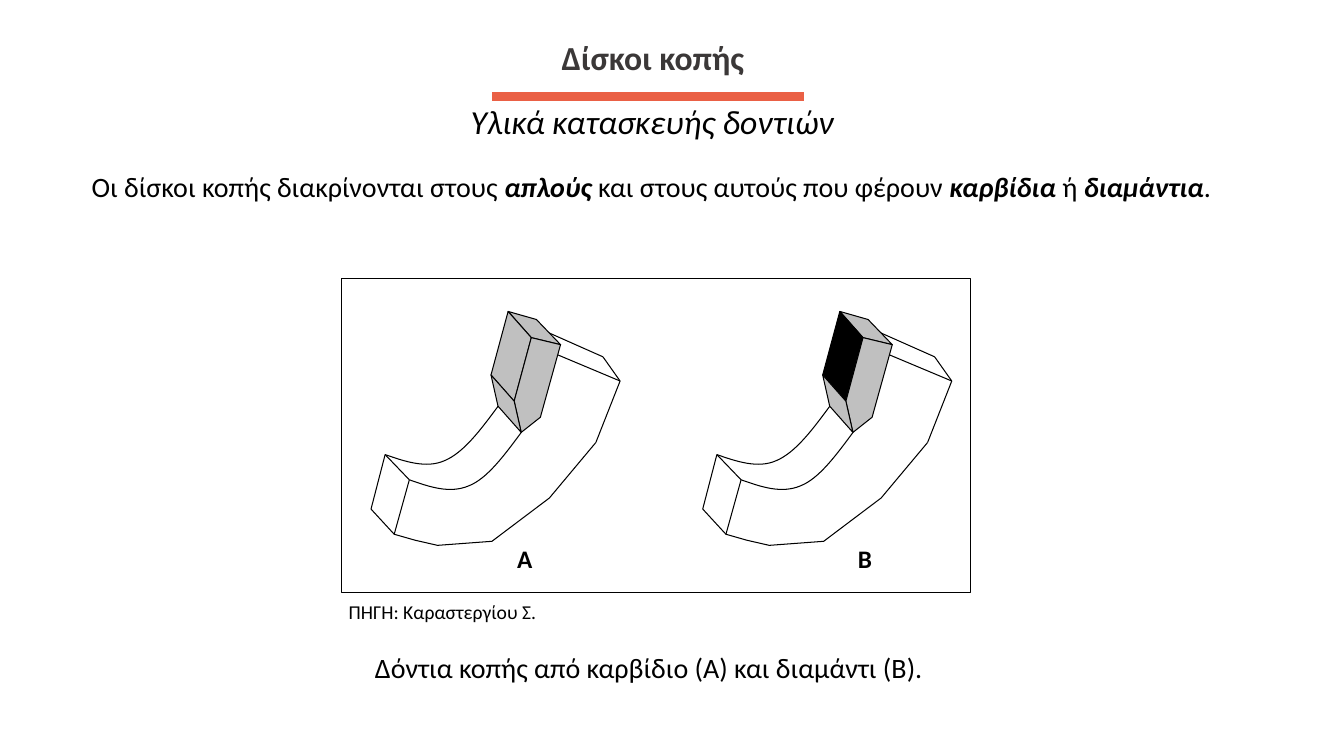
from lxml.etree import SubElement
from pptx import Presentation
from pptx.dml.color import RGBColor
from pptx.enum.shapes import MSO_CONNECTOR, MSO_SHAPE
from pptx.enum.text import MSO_ANCHOR, MSO_AUTO_SIZE, PP_ALIGN
from pptx.oxml.ns import qn
from pptx.util import Inches, Pt

FONT = "Calibri"
BLACK, GREY, CHARCOAL, CORAL = "000000", "C0C0C0", "3B3838", "EA6045"
UNIT = Inches(0.01)

TOOTH_LINES = [
    ((185, 43), (247, 69)),
    ((176, 21), (230, 45)),
    ((230, 45), (247, 69)),
    ((38, 167), (14, 142)),
    ((38, 167), (23, 221)),
    ((14, 142), (0, 196)),
    ((247, 69), (223, 130)),
]
TOOTH_CURVES = [
    [(149, 120), (132, 143), (115, 166), (97, 173), (78, 181), (58, 174), (38, 167)],
    [(126, 94), (109, 117), (92, 140), (73, 148), (55, 156), (34, 149), (14, 142)],
]
TOOTH_BACK = [(223, 130), (177, 185), (120, 228), (66, 232), (44, 227), (23, 221), (0, 196)]
TIP_TOP = [(136, 0), (164, 8), (188, 33), (159, 26)]
TIP_FRONT = [(159, 26), (142, 89), (119, 63), (136, 0)]
TIP_SIDE = [(159, 26), (188, 33), (168, 105), (149, 120), (142, 89)]
TIP_BOTTOM = [(149, 120), (126, 94), (119, 63), (142, 89)]


def color(value):
    return RGBColor.from_string(value)


def write(frame, runs, size, text_color=BLACK, align=PP_ALIGN.LEFT):
    para = frame.paragraphs[0]
    para.alignment = align
    for text, bold, italic in runs:
        span = para.add_run()
        span.text = text
        span.font.name = FONT
        span.font.size = Pt(size)
        span.font.bold = bold
        span.font.italic = italic
        span.font.color.rgb = color(text_color)
    return para


def add_text(page, box, runs, size, align=PP_ALIGN.LEFT, wrap=True):
    frame = page.shapes.add_textbox(*map(Inches, box)).text_frame
    frame.word_wrap = wrap
    return write(frame, runs, size, align=align)


def add_line(page, start, end, line_color=BLACK, width=0.75):
    line = page.shapes.add_connector(MSO_CONNECTOR.STRAIGHT, *start, *end)
    line.line.color.rgb = color(line_color)
    line.line.width = Pt(width)
    SubElement(line._element.spPr, qn("a:effectLst"))


def style_outline(shape, fill=None):
    shape.shadow.inherit = False
    if fill:
        shape.fill.solid()
        shape.fill.fore_color.rgb = color(fill)
    else:
        shape.fill.background()
    shape.line.color.rgb = color(BLACK)
    shape.line.width = Pt(0.75)


def add_outline(page, left, top, points, fill=None, close=False):
    builder = page.shapes.build_freeform(*points[0], scale=1 / UNIT if UNIT < 1 else float(UNIT))
    builder.add_line_segments(points[1:], close=close)
    shape = builder.convert_to_shape(left, top)
    style_outline(shape, fill)
    return shape


def add_curve(page, left, top, points):
    shape = add_outline(page, left, top, points)
    drawn = next(shape._element.iter(qn("a:path")))
    segments = drawn.findall(qn("a:lnTo"))
    for first in range(0, len(segments), 3):
        curve = SubElement(drawn, qn("a:cubicBezTo"))
        for segment in segments[first:first + 3]:
            curve.append(segment[0])
            drawn.remove(segment)


def add_tooth(page, left, top, front_fill):
    left, top = Inches(left), Inches(top)
    for ends in TOOTH_LINES:
        start, end = [(left + x * UNIT, top + y * UNIT) for x, y in ends]
        add_line(page, start, end)
    for points in TOOTH_CURVES:
        add_curve(page, left, top, points)
    add_outline(page, left, top, TOOTH_BACK)
    faces = [(TIP_TOP, GREY), (TIP_FRONT, front_fill), (TIP_SIDE, GREY), (TIP_BOTTOM, GREY)]
    for points, fill in faces:
        add_outline(page, left, top, points, fill, close=True)


def add_heading(page, left, top, width, height):
    title = page.shapes.title
    title.left, title.top = Inches(left), Inches(top)
    title.width, title.height = Inches(width), Inches(height)
    frame = title.text_frame
    frame.auto_size = MSO_AUTO_SIZE.NONE
    frame.vertical_anchor = MSO_ANCHOR.MIDDLE
    frame.margin_left = frame.margin_right = Inches(0.05)
    frame.margin_top = frame.margin_bottom = Inches(0.03)
    write(frame, [("Δίσκοι κοπής", True, False)], 24, CHARCOAL, PP_ALIGN.CENTER)
    rule_y = Inches(top + 0.62)
    add_line(page, (Inches(left + 2.31), rule_y), (Inches(left + 5.4), rule_y), CORAL, 6.5)
    subtitle = add_text(page, (left + 1.88, top + 0.61, 4.1, 0.5),
                        [("Υλικά κατασκευής δοντιών", False, True)], 24,
                        PP_ALIGN.JUSTIFY, wrap=False)
    subtitle._p.get_or_add_pPr().set("indent", str(Inches(0.12)))


def add_introduction(page, box):
    runs = [
        ("Οι δίσκοι κοπής διακρίνονται στους ", False, False),
        ("απλούς", True, True),
        (" και στους αυτούς που φέρουν ", False, False),
        ("καρβίδια", True, True),
        (" ή ", False, False),
        ("διαμάντια", True, True),
        (".", False, False),
    ]
    add_text(page, box, runs, 20, PP_ALIGN.JUSTIFY)


def add_figure(page, left, top, width, height):
    border = page.shapes.add_shape(MSO_SHAPE.RECTANGLE, *map(Inches, (left, top, width, height)))
    style_outline(border)
    teeth = [("Α", 0.29, 1.21, 1.21, GREY), ("Β", 3.58, 4.67, 1.04, BLACK)]
    for letter, tooth_x, label_x, label_width, front_fill in teeth:
        add_tooth(page, left + tooth_x, top + 0.33, front_fill)
        add_text(page, (left + label_x, top + 2.58, label_width, 0.67),
                 [(letter, True, False)], 18, PP_ALIGN.CENTER)
    bottom = top + height
    add_text(page, (left - 0.03, bottom + 0.02, 2.08, 0.34),
             [("ΠΗΓΗ: Καραστεργίου Σ.", False, False)], 14, wrap=False)
    add_text(page, (left + 0.23, bottom + 0.52, 5.68, 0.44),
             [("Δόντια κοπής από καρβίδιο (Α) και διαμάντι (Β).", False, False)], 20, wrap=False)


def main():
    deck = Presentation()
    deck.slide_width, deck.slide_height = Inches(13.33), Inches(7.5)
    page = deck.slides.add_slide(deck.slide_layouts[5])
    add_heading(page, 2.57, 0.34, 7.81, 0.45)
    add_introduction(page, (0.81, 1.63, 11.78, 0.44))
    add_figure(page, 3.39, 2.76, 6.24, 3.12)
    deck.save("out.pptx")


if __name__ == "__main__":
    main()
